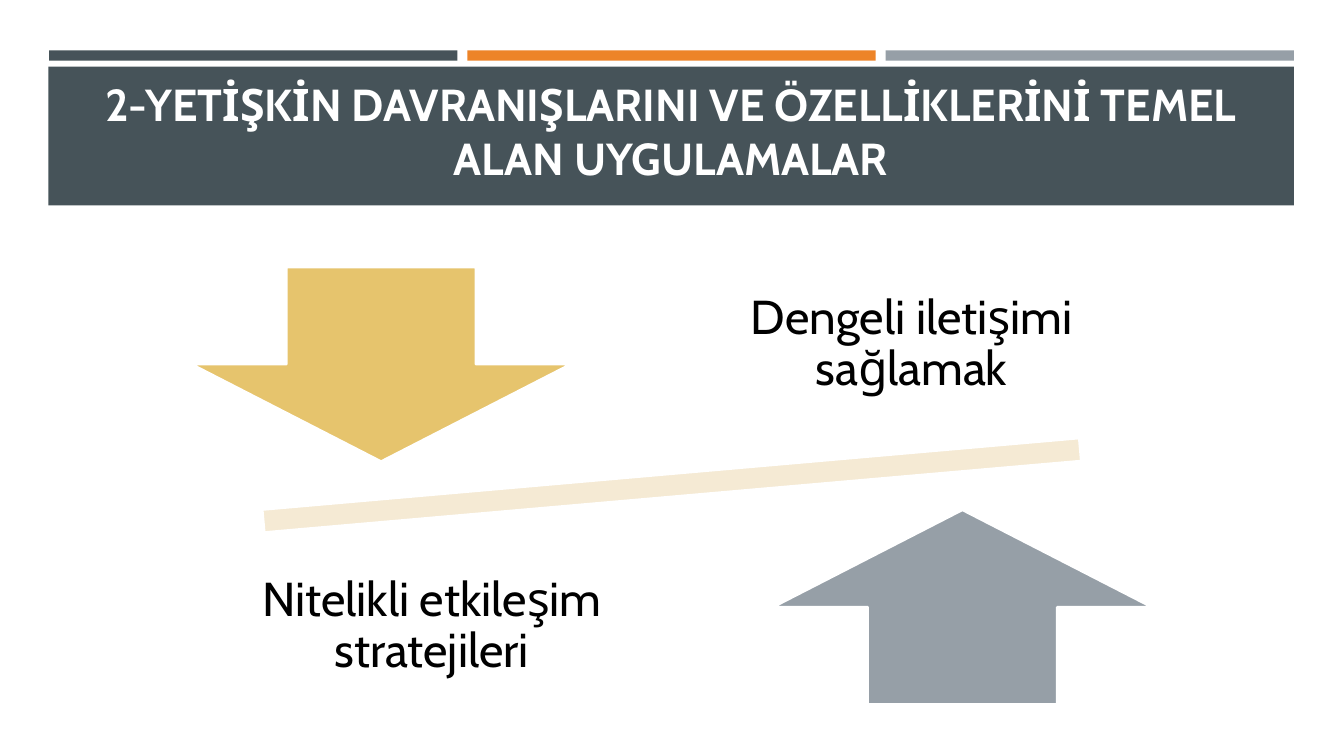
from pptx import Presentation
from pptx.dml.color import RGBColor
from pptx.enum.shapes import MSO_SHAPE as SHAPE
from pptx.enum.text import MSO_ANCHOR as ANCHOR, MSO_AUTO_SIZE as AUTOSIZE, PP_ALIGN as ALIGN
from pptx.util import Cm, Pt

SLATE = RGBColor(0x46, 0x53, 0x59)
ORANGE = RGBColor(0xED, 0x84, 0x28)
GREY = RGBColor(0x96, 0x9F, 0xA7)
GOLD = RGBColor(0xE6, 0xC4, 0x6D)
CREAM = RGBColor(0xF5, 0xEA, 0xD4)
WHITE = RGBColor(0xFF, 0xFF, 0xFF)
BLACK = RGBColor(0x00, 0x00, 0x00)

prs = Presentation()
prs.slide_width, prs.slide_height = Cm(33.87), Cm(19.05)
slide = prs.slides.add_slide(prs.slide_layouts[5])
shapes = slide.shapes


def add_block(kind, left, top, width, height, fill, line=None):
    sp = shapes.add_shape(kind, Cm(left), Cm(top), Cm(width), Cm(height))
    sp.shadow.inherit = False
    sp.fill.solid()
    sp.fill.fore_color.rgb = fill
    if line is None:
        sp.line.fill.background()
    else:
        sp.line.color.rgb = line
        sp.line.width = Pt(1.75)
    return sp


def write(sp, text, size, color, bold=False, anchor=ANCHOR.MIDDLE, spacing=1.0, inset=None):
    tf = sp.text_frame
    tf.word_wrap = True
    tf.auto_size = AUTOSIZE.NONE
    tf.vertical_anchor = anchor
    if inset is not None:
        tf.margin_left = tf.margin_right = tf.margin_top = tf.margin_bottom = Cm(inset)
    p = tf.paragraphs[0]
    p.alignment = ALIGN.CENTER
    p.line_spacing = spacing
    r = p.add_run()
    r.text = text
    r.font.name = "Cabin"
    r.font.size = Pt(size)
    r.font.bold = bold
    r.font.color.rgb = color


# Header stripes and title band
for i, color in enumerate((SLATE, ORANGE, GREY)):
    add_block(SHAPE.RECTANGLE, 1.24 + i * 10.54, 1.27, 10.29, 0.26, color)
add_block(SHAPE.RECTANGLE, 1.22, 1.68, 31.39, 3.5, SLATE)

title = shapes.title
title.left, title.top, title.width, title.height = Cm(1.6), Cm(2.03), Cm(30.63), Cm(2.74)
write(title, "2-YETİŞKİN DAVRANIŞLARINI VE ÖZELLİKLERİNİ TEMEL ALAN UYGULAMALAR",
      32, WHITE, bold=True, anchor=ANCHOR.BOTTOM)
shapes._spTree.append(title._element)  # bring the title in front of its band

# Balance beam with an arrow and a label on each side
beam = add_block(SHAPE.MATH_MINUS, 2.87, 11, 28.12, 2.46, CREAM, line=WHITE)
beam.rotation = 355

sides = (
    (SHAPE.DOWN_ARROW, 4.83, 6.73, GOLD, "Dengeli iletişimi sağlamak", 17.88, 6.1),
    (SHAPE.UP_ARROW, 19.48, 12.85, GREY, "Nitelikli etkileşim stratejileri", 5.79, 13.21),
)
for arrow, left, top, color, label, label_left, label_top in sides:
    add_block(arrow, left, top, 9.55, 4.9, color, line=WHITE)
    box = shapes.add_textbox(Cm(label_left), Cm(label_top), Cm(10.19), Cm(5.16))
    write(box, label, 34, BLACK, spacing=0.9, inset=0.66)

prs.save("out.pptx")
